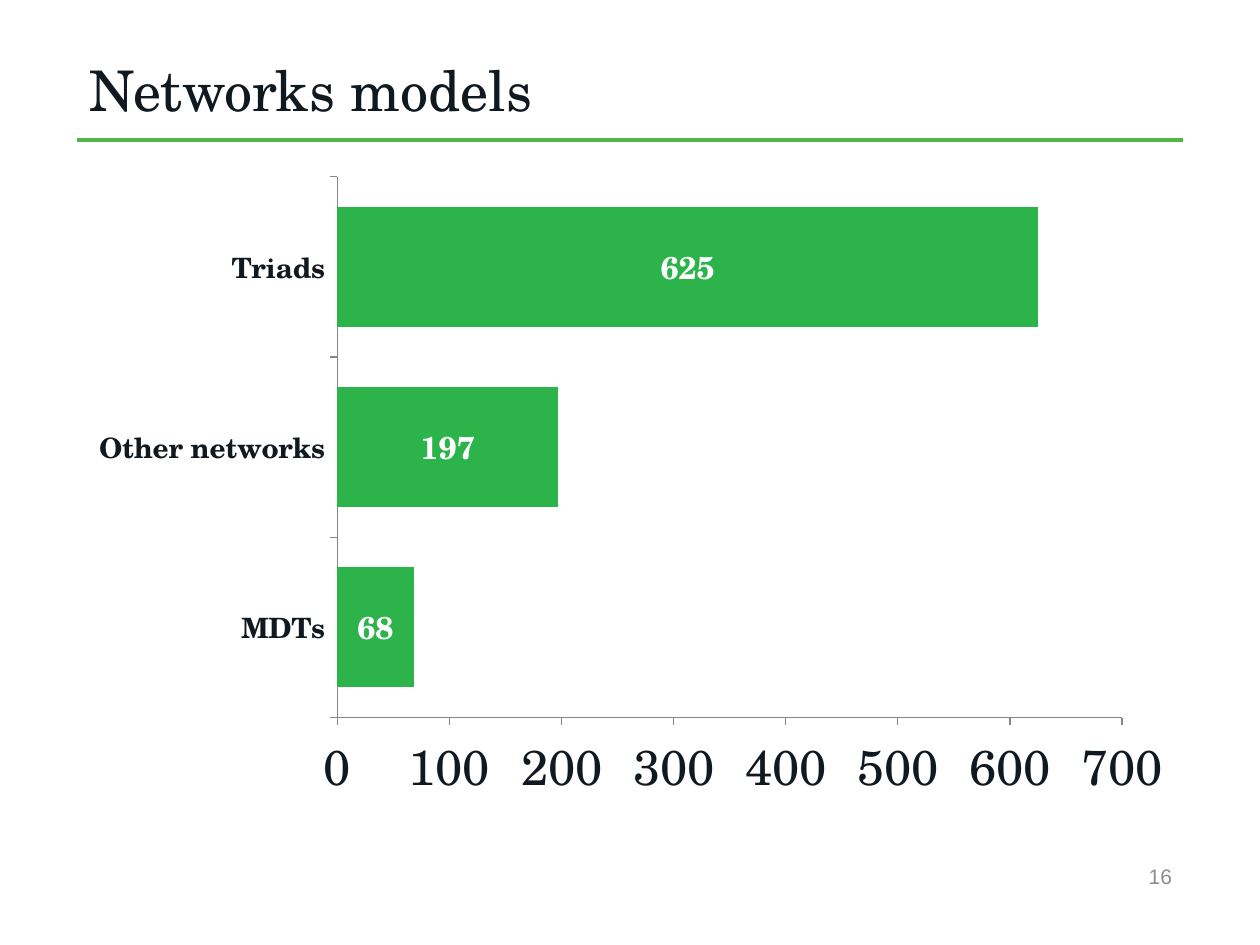
from dataclasses import dataclass

from lxml.etree import SubElement
from pptx import Presentation
from pptx.chart.data import CategoryChartData
from pptx.dml.color import RGBColor
from pptx.enum.chart import XL_CHART_TYPE, XL_LABEL_POSITION, XL_TICK_MARK
from pptx.enum.shapes import MSO_CONNECTOR
from pptx.enum.text import MSO_ANCHOR, PP_ALIGN
from pptx.oxml.ns import qn
from pptx.slide import Slide
from pptx.util import Pt

SERIF = "TeX Gyre Schola"
INK = "101820"
AXIS_GRAY = "868686"
LEFT, RIGHT = 44, 676


@dataclass
class Label:
    text: str
    left: float
    top: float
    width: float
    height: float
    size: float
    font_name: str
    color: str
    alignment: PP_ALIGN = PP_ALIGN.LEFT


def rgb(value: str) -> RGBColor:
    return RGBColor.from_string(value)


def style_font(font, name: str, size: float, color: str, bold: bool = False) -> None:
    font.name = name
    font.size = Pt(size)
    font.bold = bold
    font.color.rgb = rgb(color)


def add_label(slide: Slide, label: Label) -> None:
    shape = slide.shapes.add_textbox(
        Pt(label.left), Pt(label.top), Pt(label.width), Pt(label.height)
    )
    frame = shape.text_frame
    frame.word_wrap = True
    frame.vertical_anchor = MSO_ANCHOR.MIDDLE
    paragraph = frame.paragraphs[0]
    paragraph.alignment = label.alignment
    run = paragraph.add_run()
    run.text = label.text
    style_font(run.font, label.font_name, label.size, label.color)


def add_rule(slide: Slide, top: float) -> None:
    connector = slide.shapes.add_connector(
        MSO_CONNECTOR.STRAIGHT, Pt(LEFT), Pt(top), Pt(RIGHT), Pt(top)
    )
    connector.line.color.rgb = rgb("50B748")
    connector.line.width = Pt(2)
    SubElement(connector._element.spPr, qn("a:effectLst"))


def style_axis(axis, size: float, bold: bool) -> None:
    axis.has_major_gridlines = False
    axis.major_tick_mark = XL_TICK_MARK.OUTSIDE
    axis.minor_tick_mark = XL_TICK_MARK.NONE
    axis.format.line.color.rgb = rgb(AXIS_GRAY)
    axis.format.line.width = Pt(0.75)
    style_font(axis.tick_labels.font, SERIF, size, INK, bold)


def add_network_chart(slide: Slide) -> None:
    data = CategoryChartData(number_format="#,##0")
    data.categories = ["MDTs", "Other networks", "Triads"]
    data.add_series("Series 1", [68, 197, 625])
    chart = slide.shapes.add_chart(
        XL_CHART_TYPE.BAR_STACKED, Pt(LEFT), Pt(93.6), Pt(633), Pt(371.5), data
    ).chart
    chart.has_legend = False
    chart.has_title = False
    style_font(chart.font, SERIF, 16, INK)
    style_axis(chart.category_axis, 16, True)
    style_axis(chart.value_axis, 28, False)
    chart.value_axis.minimum_scale = 0
    chart.value_axis.maximum_scale = 700
    chart.value_axis.major_unit = 100

    plot = chart.plots[0]
    plot.vary_by_categories = False
    plot.gap_width = 50
    plot.overlap = 100
    series = plot.series[0]
    series.format.fill.solid()
    series.format.fill.fore_color.rgb = rgb("2CB34A")
    labels = series.data_labels
    labels.show_value = True
    labels.number_format = "#,##0"
    labels.number_format_is_linked = False
    labels.position = XL_LABEL_POSITION.CENTER
    style_font(labels.font, SERIF, 18, "FFFFFF", True)


def main() -> None:
    presentation = Presentation()
    presentation.slide_width = Pt(720)
    presentation.slide_height = Pt(540)
    slide = presentation.slides.add_slide(presentation.slide_layouts[6])
    add_rule(slide, 80)
    add_label(slide, Label("Networks models", LEFT, 21.6, 633, 58.3, 32, SERIF, INK))
    add_label(
        slide,
        Label("16", 448.6, 486, 228.2, 28.8, 12, "Arial", "8C8C8D", PP_ALIGN.RIGHT),
    )
    add_network_chart(slide)
    presentation.save("out.pptx")


if __name__ == "__main__":
    main()
